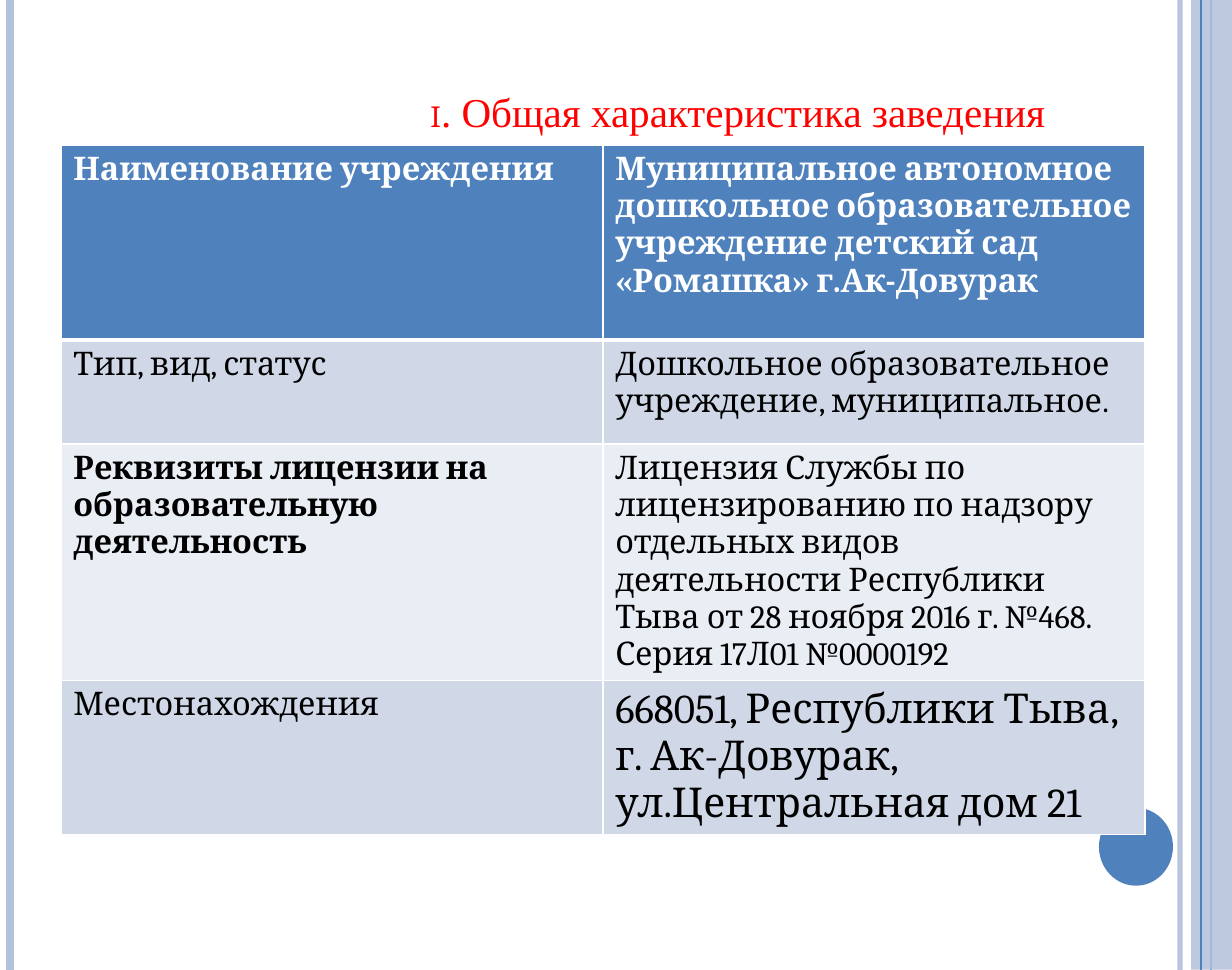
from lxml import etree
from pptx import Presentation
from pptx import util as u
from pptx.dml.color import RGBColor
from pptx.enum import shapes, text
from pptx.oxml.ns import qn

PX = 914400 / 123.2
SLIDE_WIDTH, SLIDE_HEIGHT = u.Pt(720), u.Pt(567)
HEIGHT = 970
COLORS = {
    "blue": "4F81BD", "pale": "B3C1DB", "white": "FFFFFF", "black": "000000",
    "red": "FF0000", "band": "D0D8E8", "light": "E9EDF4",
}
BODY_FONT, TITLE_FONT = "Cambria", "Times New Roman"

# Vertical rules: x, width in points, colour, opacity in percent
BACK_RULES = [(1180, 3, "pale", 93), (10, 4.5, "pale", 100), (1211, 1.5, "blue", 100)]
FRONT_RULES = [(1201, 0.75, "blue", 100)]
SIDE_BAND = (1191, 0, 41, HEIGHT)
CIRCLE = (1099, 808, 74, 78)

TITLE_BOX = (414, 80, 648, 62)
TITLE = [("I", 18, BODY_FONT), (". Общая характеристика заведения", 24, TITLE_FONT)]

TABLE_LEFT, TABLE_TOP, COLUMN_WIDTH = 61, 145, 542
# Rows: height, fill, text colour, then (text, size, bold) per cell
ROWS = [
    (195, "blue", "white", [
        ("Наименование учреждения", 19, True),
        ("Муниципальное автономное дошкольное образовательное учреждение "
         "детский сад «Ромашка» г.Ак-Довурак", 19, True)]),
    (104, "band", "black", [
        ("Тип, вид, статус", 19, False),
        ("Дошкольное образовательное учреждение, муниципальное.", 19, False)]),
    (228, "light", "black", [
        ("Реквизиты лицензии на образовательную\nдеятельность", 19, True),
        ("Лицензия Службы по лицензированию по надзору отдельных видов "
         "деятельности Республики Тыва от 28 ноября 2016 г. №468. "
         "Серия 17Л01 №0000192", 19, False)]),
    (148, "band", "black", [
        ("Местонахождения", 19, False),
        ("668051, Республики Тыва, г. Ак-Довурак, ул.Центральная дом 21", 24, False)]),
]


def px(length):
    return u.Emu(round(length * PX))


def rgb(name):
    return RGBColor.from_string(COLORS[name])


def style(span, size, font, color, bold=False):
    span.font.size = u.Pt(size)
    span.font.name = font
    span.font.bold = bold
    span.font.color.rgb = rgb(color)


def set_opacity(element, percent):
    """Make the first colour inside the element partly transparent."""
    color = next(element.iter(qn("a:srgbClr")))
    etree.SubElement(color, qn("a:alpha"), val=str(percent * 1000))


def add_rules(page, rules):
    for x, width, color, opacity in rules:
        rule = page.shapes.add_connector(
            shapes.MSO_CONNECTOR.STRAIGHT, px(x), 0, px(x), px(HEIGHT))
        rule.line.width = u.Pt(width)
        rule.line.color.rgb = rgb(color)
        properties = rule.element.spPr
        if opacity < 100:
            set_opacity(properties, opacity)
        etree.SubElement(properties, qn("a:effectLst"))


def add_plain_shape(page, kind, frame, color):
    shape = page.shapes.add_shape(kind, *map(px, frame))
    shape.shadow.inherit = False
    shape.fill.solid()
    shape.fill.fore_color.rgb = rgb(color)
    shape.line.fill.background()
    return shape


def set_borders(cell, top, bottom):
    """White borders, one point at the sides; top and bottom in points."""
    properties = cell._tc.get_or_add_tcPr()
    widths = {"lnL": 1, "lnR": 1, "lnT": top, "lnB": bottom}
    for index, (side, width) in enumerate(widths.items()):
        line = etree.Element(qn(f"a:{side}"), w=str(int(u.Pt(width))))
        fill = etree.SubElement(line, qn("a:solidFill"))
        etree.SubElement(fill, qn("a:srgbClr"), val=COLORS["white"])
        properties.insert(index, line)


def add_facts_table(page):
    total = sum(row[0] for row in ROWS)
    table = page.shapes.add_table(
        len(ROWS), 2, px(TABLE_LEFT), px(TABLE_TOP), px(2 * COLUMN_WIDTH), px(total)).table
    for column in table.columns:
        column.width = px(COLUMN_WIDTH)
    for index, (height, fill, color, contents) in enumerate(ROWS):
        table.rows[index].height = px(height)
        for cell, (words, size, bold) in zip(table.rows[index].cells, contents):
            cell.fill.solid()
            cell.fill.fore_color.rgb = rgb(fill)
            set_borders(cell, 3 if index == 1 else 1, 3 if index == 0 else 1)
            cell.text_frame.text = words
            for para in cell.text_frame.paragraphs:
                for span in para.runs:
                    style(span, size, BODY_FONT, color, bold)


def add_title(page):
    frame = page.shapes.add_textbox(*map(px, TITLE_BOX)).text_frame
    frame.word_wrap = False
    frame.auto_size = text.MSO_AUTO_SIZE.SHAPE_TO_FIT_TEXT
    para = frame.paragraphs[0]
    para.alignment = text.PP_ALIGN.CENTER
    for words, size, font in TITLE:
        span = para.add_run()
        span.text = words
        style(span, size, font, "red")


def main():
    deck = Presentation()
    deck.slide_width, deck.slide_height = SLIDE_WIDTH, SLIDE_HEIGHT
    page = deck.slides.add_slide(deck.slide_layouts[6])
    add_rules(page, BACK_RULES)
    band = add_plain_shape(page, shapes.MSO_SHAPE.RECTANGLE, SIDE_BAND, "pale")
    set_opacity(band.element.spPr, 87)
    add_rules(page, FRONT_RULES)
    add_plain_shape(page, shapes.MSO_SHAPE.OVAL, CIRCLE, "blue")
    add_facts_table(page)
    add_title(page)
    deck.save("out.pptx")


if __name__ == "__main__":
    main()
